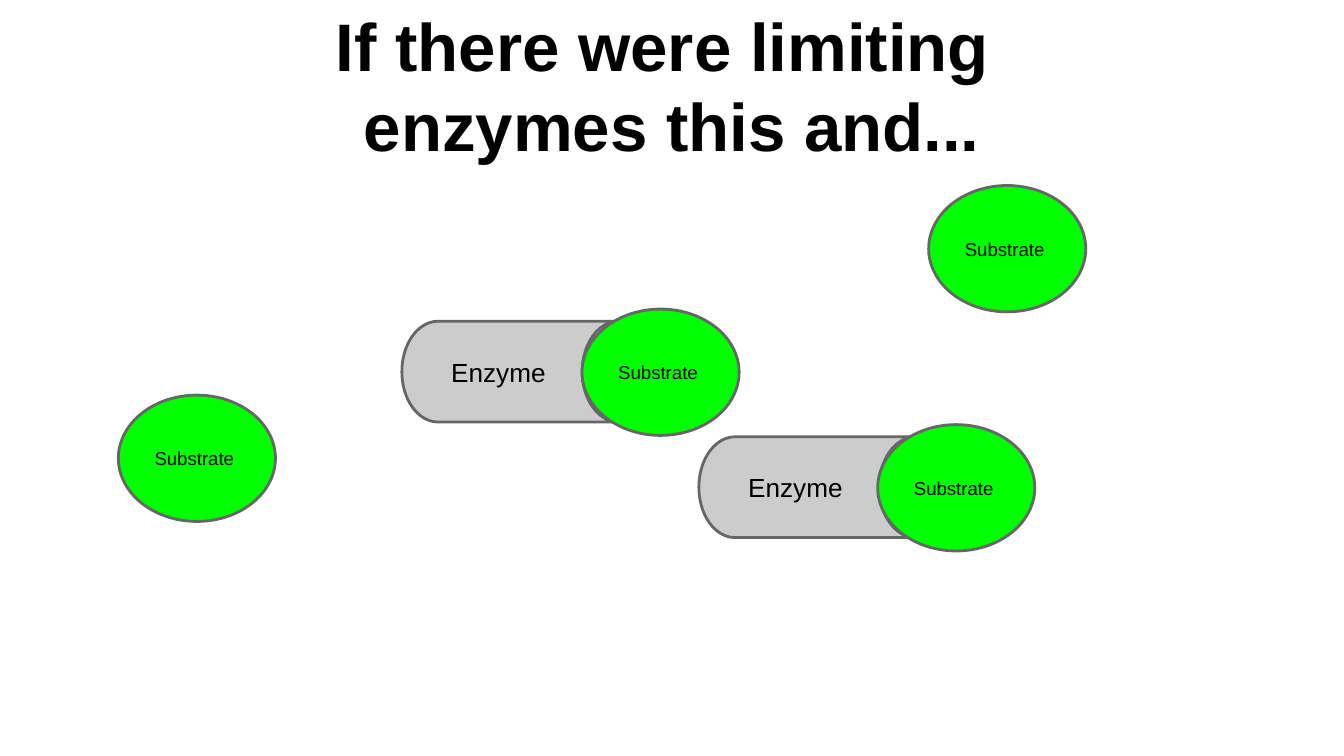
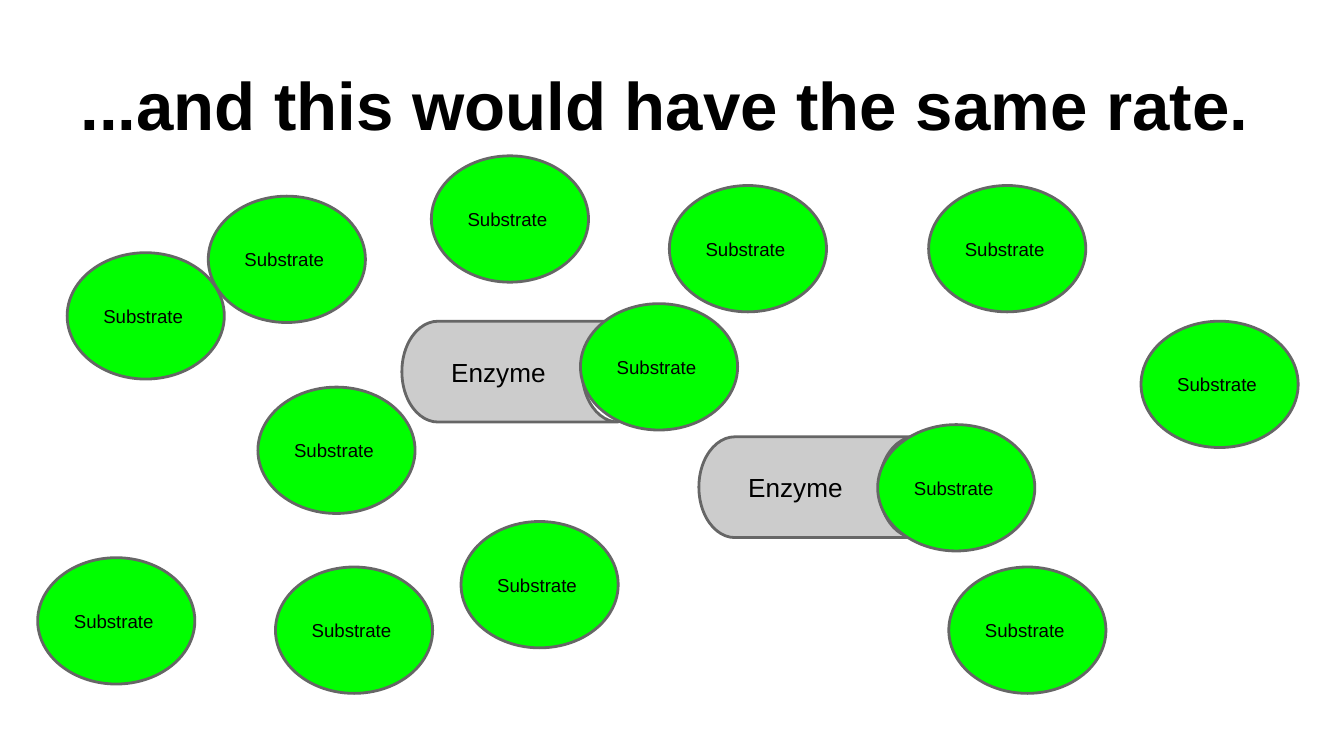
from pptx import Presentation
from pptx.dml.color import RGBColor
from pptx.enum.shapes import MSO_SHAPE
from pptx.enum.text import MSO_ANCHOR, MSO_AUTO_SIZE, PP_ALIGN
from pptx.util import Pt

FONT = "Arial"
BLACK, GREY, EDGE, GREEN = "000000", "CCCCCC", "666666", "00FF00"
WIDE, HIGH = 720, 405
PAD = 7.2
TITLE = (36, 648, 67.7)

ENZYME = dict(kind=MSO_SHAPE.FLOWCHART_STORED_DATA, text="Enzyme",
              size=14, fill=GREY, dims=(115.9, 54))
SUBSTRATE = dict(kind=MSO_SHAPE.OVAL, text="Substrate",
                 size=10, fill=GREEN, dims=(84.2, 67.7))

ENZYMES = [(215.3, 172.1), (374.4, 234)]
SHARED = [(470.2, 227.5), (497.5, 99.4)]
FEW = [(311.8, 165.6), (63.4, 211.7)]
MANY = [(311, 162.7), (138.2, 207.4), (358.6, 99.4), (147.6, 303.8),
        (36, 135.4), (20.2, 298.8), (247, 279.4), (611.3, 172.1),
        (231.1, 83.5), (111.6, 105.1), (508.3, 303.8)]


def color(code):
    return RGBColor.from_string(code)


def write(shape, text, size, bold=False, align=PP_ALIGN.LEFT,
          anchor=MSO_ANCHOR.MIDDLE):
    frame = shape.text_frame
    frame.text = text
    frame.word_wrap = True
    frame.auto_size = MSO_AUTO_SIZE.NONE
    frame.vertical_anchor = anchor
    frame.margin_left = frame.margin_right = Pt(PAD)
    frame.margin_top = frame.margin_bottom = Pt(PAD)
    for para in frame.paragraphs:
        para.alignment = align
        para.space_before = Pt(0)
        for run in para.runs:
            run.font.name = FONT
            run.font.size = Pt(size)
            run.font.bold = bold
            run.font.color.rgb = color(BLACK)


def place(shape, left, top, width, height):
    shape.left, shape.top = Pt(left), Pt(top)
    shape.width, shape.height = Pt(width), Pt(height)


def head(slide, text, top, align):
    left, width, height = TITLE
    title = slide.shapes.title
    place(title, left, top, width, height)
    write(title, text, 36, bold=True, align=align, anchor=MSO_ANCHOR.BOTTOM)


def part(slide, left, top, kind, text, size, fill, dims):
    shape = slide.shapes.add_shape(kind, Pt(left), Pt(top), *map(Pt, dims))
    shape.shadow.inherit = False
    shape.fill.solid()
    shape.fill.fore_color.rgb = color(fill)
    shape.line.color.rgb = color(EDGE)
    shape.line.width = Pt(1.5)
    write(shape, text, size)


def scene(slide, box, spots):
    left, top = box
    for x, y in ENZYMES:
        part(slide, left + x, top + y, **ENZYME)
    for x, y in spots:
        part(slide, left + x, top + y, **SUBSTRATE)


def build(deck, text, top, align, spots):
    slide = deck.slides.add_slide(deck.slide_layouts[5])
    head(slide, text, top, align)
    scene(slide, (0, 0), spots)


def main():
    deck = Presentation()
    deck.slide_width, deck.slide_height = Pt(WIDE), Pt(HIGH)
    build(deck, "If there were limiting \nenzymes this and...", 28.1,
          PP_ALIGN.CENTER, SHARED + FEW)
    build(deck, "...and this would have the same rate.", 16.6,
          PP_ALIGN.LEFT, SHARED + MANY)
    deck.save("out.pptx")


if __name__ == "__main__":
    main()
